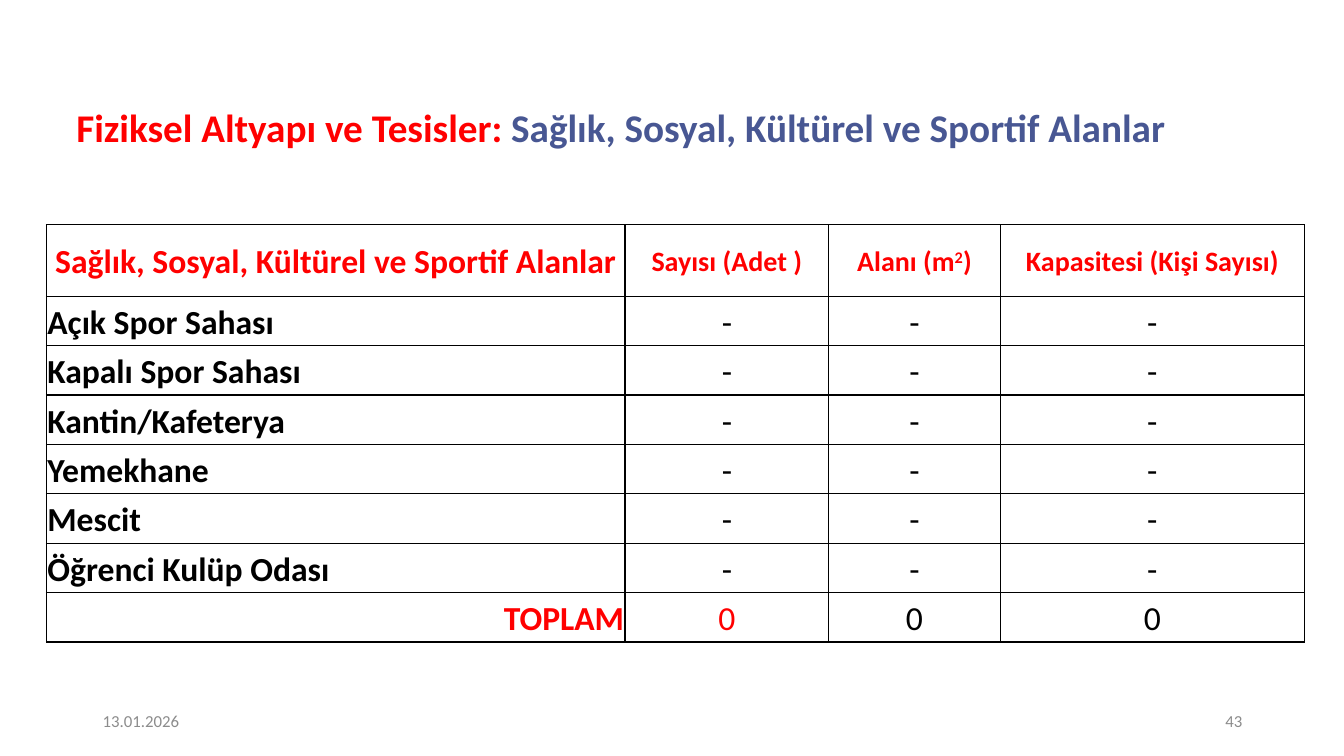
from lxml import etree
from pptx import Presentation
from pptx.dml.color import RGBColor
from pptx.enum.text import MSO_ANCHOR, PP_ALIGN
from pptx.oxml.ns import qn
from pptx.util import Inches, Pt

LEFT, MID, RIGHT = PP_ALIGN.LEFT, PP_ALIGN.CENTER, PP_ALIGN.RIGHT
CENTER = MSO_ANCHOR.MIDDLE
RED, BLUE, BLACK, GREY = "FF0000", "485793", "000000", "8C8C8C"
AREAS = "Sağlık, Sosyal, Kültürel ve Sportif Alanlar"
PLACES = ["Açık Spor Sahası", "Kapalı Spor Sahası", "Kantin/Kafeterya",
          "Yemekhane", "Mescit", "Öğrenci Kulüp Odası"]
WIDTHS = [5.74, 2.02, 1.7, 3.02]
HEAD, ROW = 0.71, 0.49


def color(code):
    """Turn a hex string into a colour."""
    return RGBColor.from_string(code)


def add_run(para, text, size, code, bold=False):
    """Add one run to a paragraph and return it."""
    run = para.add_run()
    run.text = text
    font = run.font
    font.name, font.size, font.bold = "Calibri", Pt(size), bold
    font.color.rgb = color(code)
    return run


def add_text(slide, box, align, runs, space=1.0):
    """Place a line of runs, centred in height, in a box."""
    frame = slide.shapes.add_textbox(*map(Inches, box)).text_frame
    frame.word_wrap = True
    frame.vertical_anchor = CENTER
    para = frame.paragraphs[0]
    para.alignment, para.line_spacing = align, space
    for run in runs:
        add_run(para, *run)


def add_edges(cell):
    """Draw a thin black line on all four sides of a cell."""
    props = cell._tc.get_or_add_tcPr()
    for i, side in enumerate(("lnL", "lnR", "lnT", "lnB")):
        line = etree.Element(qn("a:" + side), w=str(Pt(1)))
        fill = etree.SubElement(line, qn("a:solidFill"))
        etree.SubElement(fill, qn("a:srgbClr"), val=BLACK)
        props.insert(i, line)


def fill_cell(cell, align, size, code, bold, *texts):
    """Style a cell and write its runs, every second one raised."""
    cell.fill.background()
    add_edges(cell)
    cell.vertical_anchor = CENTER
    cell.margin_left = cell.margin_right = cell.margin_top = Inches(0.01)
    cell.margin_bottom = 0
    para = cell.text_frame.paragraphs[0]
    para.alignment, para.line_spacing = align, 1.07
    for i, text in enumerate(texts):
        run = add_run(para, text, size, code, bold)
        if i % 2:
            run._r.get_or_add_rPr().set("baseline", "30000")


def add_grid(slide, left, top):
    """Build the table of areas with its corner at left and top."""
    count = len(PLACES) + 2
    height = HEAD + ROW * (count - 1)
    table = slide.shapes.add_table(
        count, len(WIDTHS), Inches(left), Inches(top),
        Inches(sum(WIDTHS)), Inches(height)).table
    table.first_row = table.horz_banding = False
    for col, width in zip(table.columns, WIDTHS):
        col.width = Inches(width)
    for i, row in enumerate(table.rows):
        row.height = Inches(ROW if i else HEAD)

    rows = [[(MID, 24, RED, True, AREAS),
             (MID, 20, RED, True, "Sayısı (Adet )"),
             (MID, 20, RED, True, "Alanı (m", "2", ")"),
             (MID, 20, RED, True, "Kapasitesi (Kişi Sayısı)")]]
    for place in PLACES:
        rows.append([(LEFT, 24, BLACK, True, place)]
                    + [(MID, 24, BLACK, False, "-")] * 3)
    rows.append([(RIGHT, 24, RED, True, "TOPLAM"),
                 (MID, 24, RED, False, "0")]
                + [(MID, 24, BLACK, False, "0")] * 2)
    for r, row in enumerate(rows):
        for c, parts in enumerate(row):
            fill_cell(table.cell(r, c), *parts)


def add_foot(slide, left, top, width):
    """Put the date and the page number at the two ends of the foot."""
    size = 3
    add_text(slide, (left, top, size, 0.4), LEFT, [("13.01.2026", 12, GREY)])
    add_text(slide, (left + width - size, top, size, 0.4), RIGHT,
             [("43", 12, GREY)])


def main():
    """Build the slide and save it."""
    deck = Presentation()
    deck.slide_width, deck.slide_height = Inches(13.33), Inches(7.5)
    slide = deck.slides.add_slide(deck.slide_layouts[6])
    add_text(slide, (0.61, 0.94, 11.09, 0.7), MID,
             [("Fiziksel Altyapı ve Tesisler: ", 28, RED, True),
              (AREAS, 28, BLUE, True)], 0.9)
    add_grid(slide, 0.46, 2.23)
    add_foot(slide, 0.92, 6.95, 11.5)
    deck.save("out.pptx")


if __name__ == "__main__":
    main()
